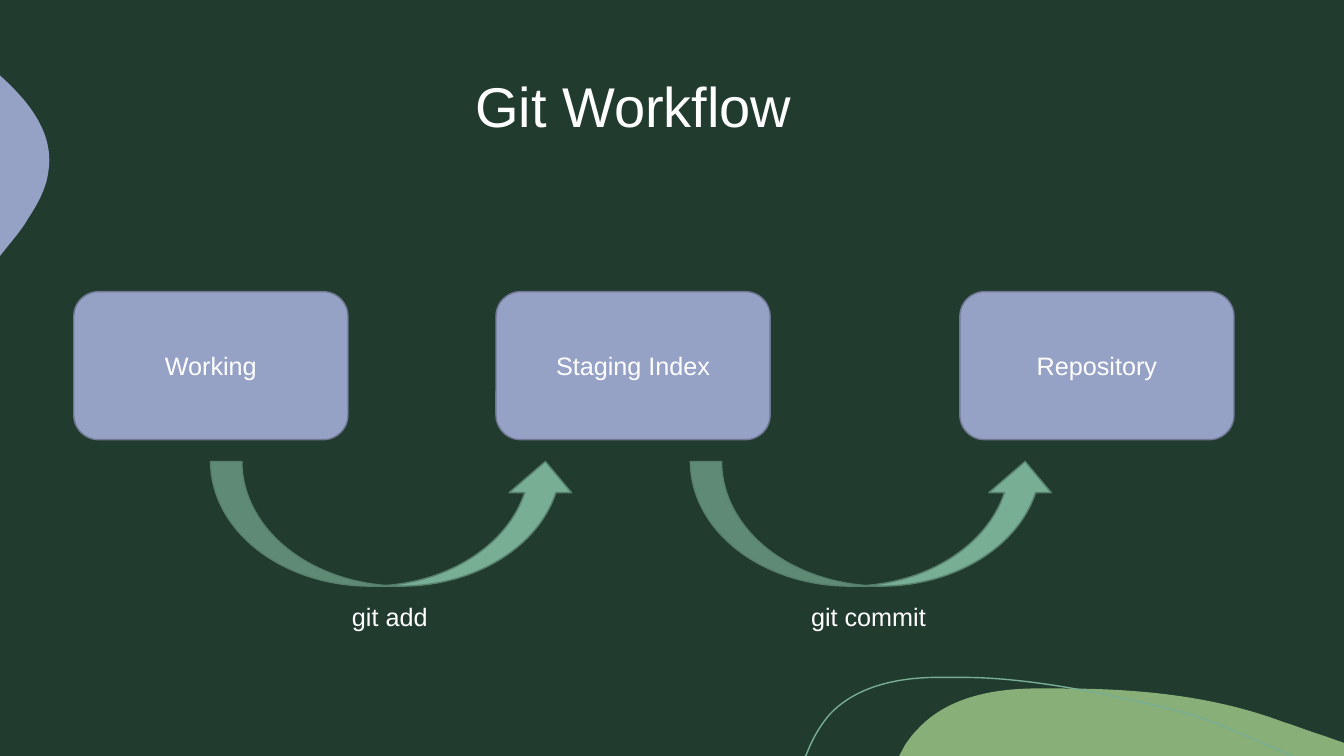
from dataclasses import dataclass

import lxml.etree
import pptx
import pptx.dml.color
import pptx.enum.shapes
import pptx.enum.text
import pptx.oxml.ns
import pptx.shapes.autoshape
import pptx.slide
import pptx.util

Cm = pptx.util.Cm
Point = tuple[float, float]
Segment = tuple[Point, ...]


@dataclass(frozen=True)
class Theme:
    background: str = "223B2F"
    text: str = "FFFFFF"
    periwinkle: str = "96A1C6"
    periwinkle_edge: str = "6F7792"
    mint: str = "77AE94"
    mint_edge: str = "58816D"
    leaf: str = "88AF77"
    font: str = "Arial"
    title_size: int = 40
    body_size: int = 18
    line_width: float = 1


@dataclass(frozen=True)
class Box:
    left: float
    top: float
    width: float
    height: float

    def lengths(self) -> tuple[int, int, int, int]:
        return Cm(self.left), Cm(self.top), Cm(self.width), Cm(self.height)


@dataclass(frozen=True)
class Outline:
    start: Point
    segments: tuple[Segment, ...]
    fill: str | None = None
    line: str | None = None


@dataclass(frozen=True)
class Stage:
    name: str
    left: float


@dataclass(frozen=True)
class Step:
    command: str
    arrow_left: float
    label_left: float
    label_width: float


THEME = Theme()

OUTLINES = (
    Outline(
        (26.77, 17.35),
        (
            ((28.65, 17.35), (30.58, 17.53), (32.33, 18.19)),
            ((32.66, 18.29), (32.97, 18.42), (33.3, 18.52)),
            ((33.87, 18.72),),
            ((33.87, 19.05),),
            ((22.66, 19.05),),
            ((22.81, 18.77),),
            ((22.91, 18.62), (23.01, 18.49), (23.14, 18.36)),
            ((23.85, 17.6), (24.94, 17.37), (25.98, 17.35)),
            ((26.24, 17.35), (26.49, 17.35), (26.77, 17.35)),
        ),
        fill=THEME.leaf,
    ),
    Outline(
        (0, 1.9),
        (
            ((0.03, 1.93),),
            ((0.76, 2.59), (1.37, 3.38), (1.22, 4.32)),
            ((1.17, 4.75), (0.94, 5.16), (0.69, 5.54)),
            ((0.61, 5.69), (0.43, 5.92), (0.2, 6.2)),
            ((0, 6.45),),
        ),
        fill=THEME.periwinkle,
    ),
    Outline(
        (20.29, 19.05),
        (
            ((20.32, 19.02),),
            ((20.47, 18.62), (20.68, 18.26), (20.93, 17.98)),
            ((21.59, 17.3), (22.58, 17.09), (23.52, 17.07)),
            ((24.26, 17.07),),
            ((25.96, 17.07), (27.94, 17.5), (29.34, 17.83)),
            ((30.71, 18.16), (31.14, 18.47), (32.59, 19.05)),
        ),
        line=THEME.mint,
    ),
)
STAGES = (Stage("Working", 1.86), Stage("Staging Index", 12.5), Stage("Repository", 24.19))
STEPS = (Step("git add", 5.31, 8.62, 2.62), Step("git commit", 17.4, 20.19, 3.66))


def color(value: str) -> pptx.dml.color.RGBColor:
    return pptx.dml.color.RGBColor.from_string(value)


def paint(shape: pptx.shapes.autoshape.Shape, fill: str | None, line: str | None) -> None:
    shape.shadow.inherit = False
    if fill:
        shape.fill.solid()
        shape.fill.fore_color.rgb = color(fill)
    else:
        shape.fill.background()
    if line:
        shape.line.color.rgb = color(line)
        shape.line.width = pptx.util.Pt(THEME.line_width)
    else:
        shape.line.fill.background()


def write(shape: pptx.shapes.autoshape.Shape, text: str, size: int, centered: bool) -> None:
    paragraph = shape.text_frame.paragraphs[0]
    alignment = pptx.enum.text.PP_ALIGN
    paragraph.alignment = alignment.CENTER if centered else alignment.LEFT
    run = paragraph.add_run()
    run.text = text
    run.font.name = THEME.font
    run.font.size = pptx.util.Pt(size)
    run.font.color.rgb = color(THEME.text)


def bend(shape: pptx.shapes.autoshape.Shape, segments: tuple[Segment, ...]) -> None:
    qualify = pptx.oxml.ns.qn
    straight_parts = list(shape.element.iter(qualify("a:lnTo")))
    for straight, segment in zip(straight_parts, segments):
        if len(segment) == 3:
            curve = lxml.etree.Element(qualify("a:cubicBezTo"))
            for x, y in segment:
                point = lxml.etree.SubElement(curve, qualify("a:pt"))
                point.set("x", str(Cm(x) - shape.left))
                point.set("y", str(Cm(y) - shape.top))
            straight.getparent().replace(straight, curve)


def draw_outline(slide: pptx.slide.Slide, outline: Outline) -> None:
    x, y = outline.start
    builder = slide.shapes.build_freeform(Cm(x), Cm(y))
    corners = [(Cm(x), Cm(y)) for x, y in (segment[-1] for segment in outline.segments)]
    builder.add_line_segments(corners, close=outline.fill is not None)
    shape = builder.convert_to_shape()
    bend(shape, outline.segments)
    paint(shape, outline.fill, outline.line)


def draw_text(slide: pptx.slide.Slide, box: Box, text: str, size: int, wrap: bool) -> None:
    shape = slide.shapes.add_textbox(*box.lengths())
    shape.text_frame.word_wrap = wrap
    shape.text_frame.auto_size = pptx.enum.text.MSO_AUTO_SIZE.SHAPE_TO_FIT_TEXT
    write(shape, text, size, centered=wrap)


def draw_stage(slide: pptx.slide.Slide, stage: Stage) -> None:
    kind = pptx.enum.shapes.MSO_SHAPE.ROUNDED_RECTANGLE
    shape = slide.shapes.add_shape(kind, *Box(stage.left, 7.35, 6.91, 3.73).lengths())
    paint(shape, THEME.periwinkle, THEME.periwinkle_edge)
    shape.text_frame.vertical_anchor = pptx.enum.text.MSO_ANCHOR.MIDDLE
    write(shape, stage.name, THEME.body_size, centered=True)


def draw_step(slide: pptx.slide.Slide, step: Step) -> None:
    kind = pptx.enum.shapes.MSO_SHAPE.CURVED_UP_ARROW
    arrow = slide.shapes.add_shape(kind, *Box(step.arrow_left, 11.63, 9.22, 3.14).lengths())
    paint(arrow, THEME.mint, THEME.mint_edge)
    label = Box(step.label_left, 15.04, step.label_width, 1.02)
    draw_text(slide, label, step.command, THEME.body_size, wrap=False)


def main() -> None:
    presentation = pptx.Presentation()
    presentation.slide_width = Cm(33.87)
    presentation.slide_height = Cm(19.05)
    slide = presentation.slides.add_slide(presentation.slide_layouts[6])
    slide.background.fill.solid()
    slide.background.fill.fore_color.rgb = color(THEME.background)
    for outline in OUTLINES:
        draw_outline(slide, outline)
    for stage in STAGES:
        draw_stage(slide, stage)
    for step in STEPS:
        draw_step(slide, step)
    draw_text(slide, Box(7.5, 1.68, 16.92, 1.96), "Git Workflow", THEME.title_size, wrap=True)
    presentation.save("out.pptx")


if __name__ == "__main__":
    main()
